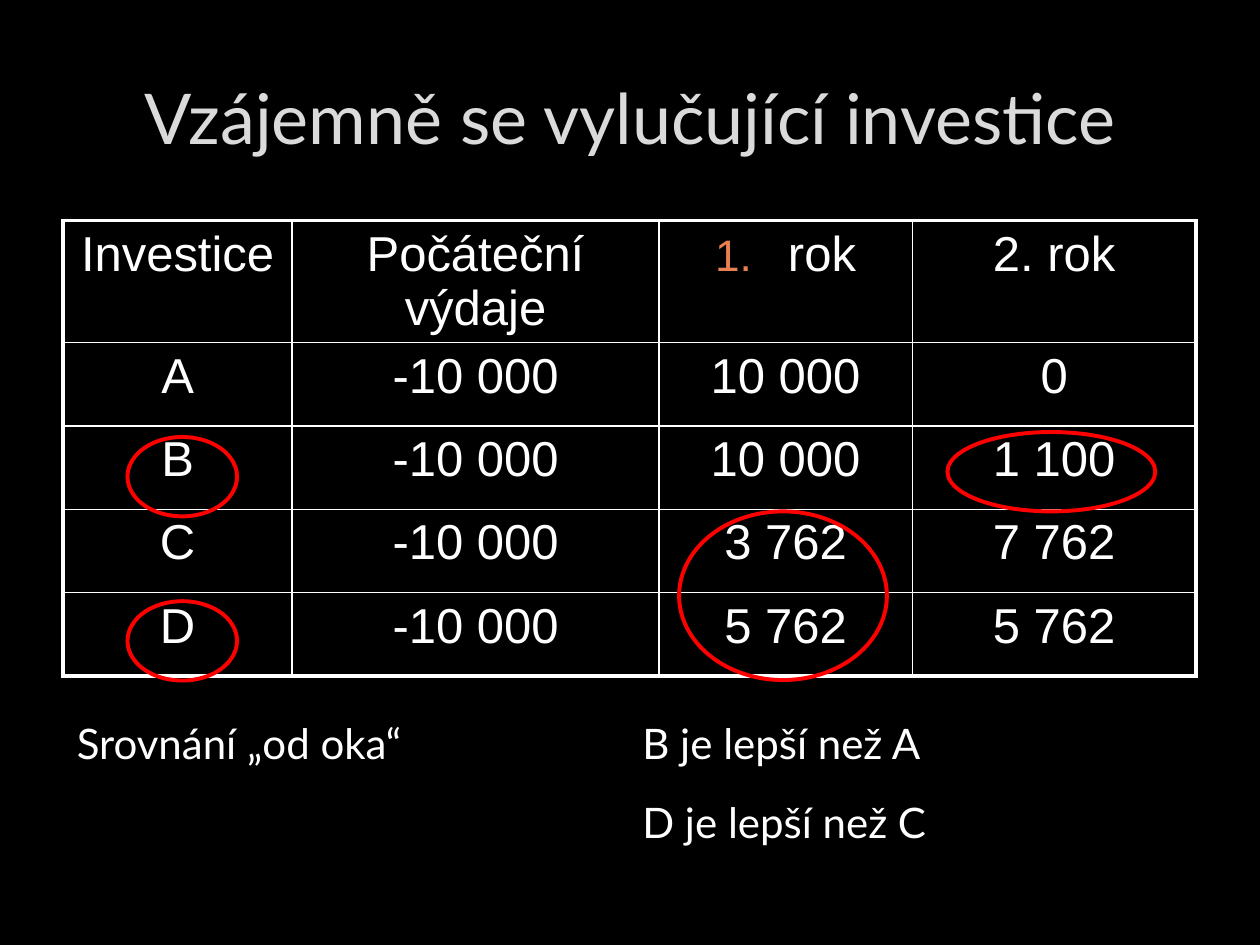
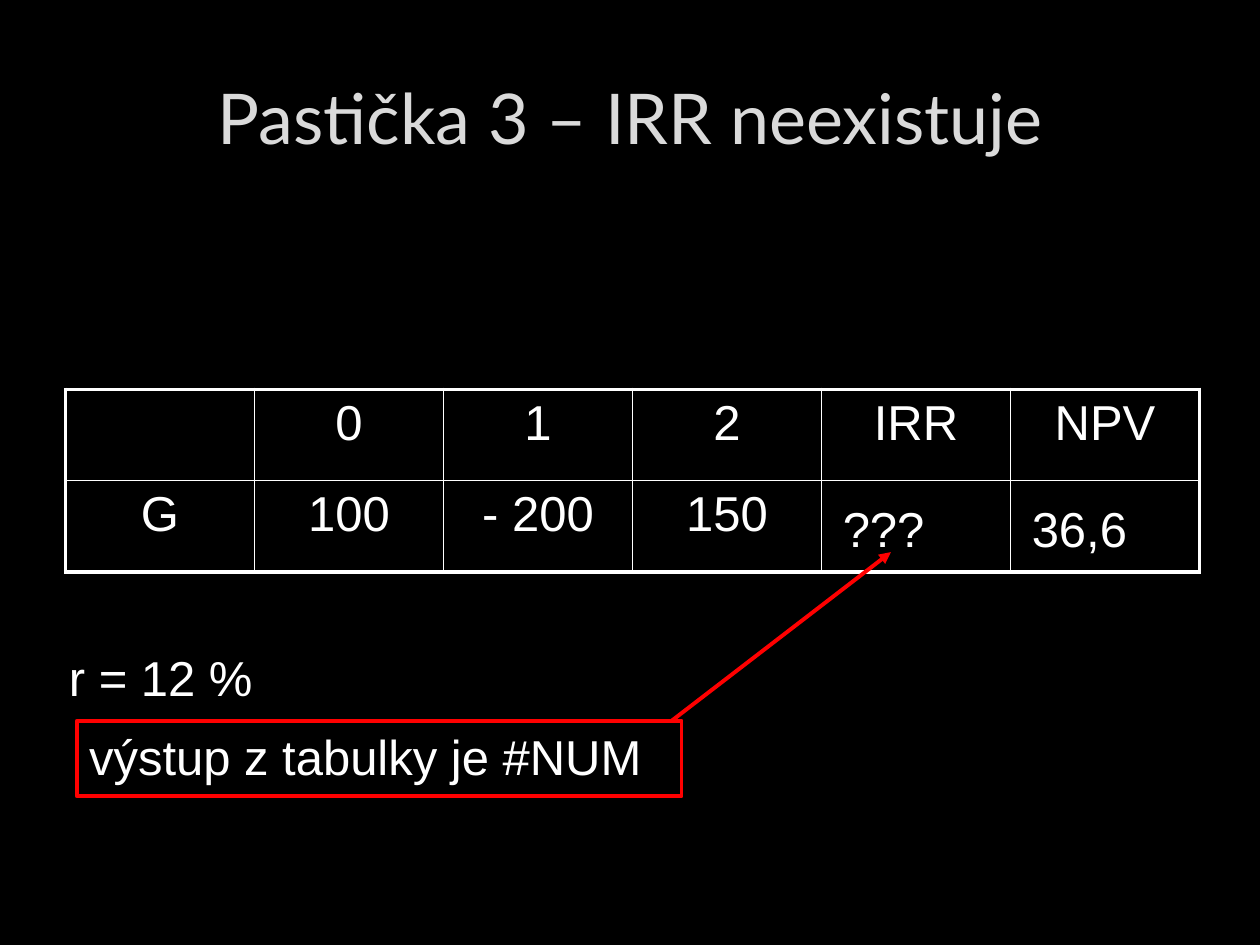
import lxml.etree
import pptx
import pptx.dml.color
import pptx.enum.shapes
import pptx.enum.text
import pptx.oxml.ns
import pptx.util

Cm, Pt = pptx.util.Cm, pptx.util.Pt
qn = pptx.oxml.ns.qn
SHAPES = pptx.enum.shapes.MSO_SHAPE
ALIGN = pptx.enum.text.PP_ALIGN
ANCHOR = pptx.enum.text.MSO_ANCHOR

BLACK, WHITE, RED = "000000", "FFFFFF", "FF0000"
PALE, ORANGE = "DADADA", "E98052"
HEAD, BODY = "Lato", "Arial"
THIN, THICK = Pt(1), Pt(2.25)


def paint(form, tone):
    """Give a fill, line or font colour format the hex colour."""
    form.rgb = pptx.dml.color.RGBColor.from_string(tone)


def add(node, tag, **attrs):
    return lxml.etree.SubElement(node, qn(tag), attrs)


def write(para, text, size, font, tone=WHITE, align=ALIGN.LEFT, gap=0):
    para.alignment = align
    para.space_before = Pt(gap)
    run = para.add_run()
    run.text = text
    run.font.size = Pt(size)
    run.font.name = font
    paint(run.font.color, tone)


def trace(line):
    """Make a line red and thick."""
    line.fill.solid()
    paint(line.fill.fore_color, RED)
    line.width = THICK


def start(deck, text):
    """Add a slide with its title and return it."""
    slide = deck.slides.add_slide(deck.slide_layouts[5])
    title = slide.shapes.title
    title.left, title.top, title.width, title.height = map(
        Cm, (1.27, 0.76, 22.86, 3.18))
    frame = title.text_frame
    frame.vertical_anchor = ANCHOR.MIDDLE
    write(frame.paragraphs[0], text, 40, HEAD, PALE, ALIGN.CENTER)
    return slide


def edge(cell, sides):
    """Draw the cell borders from a map of side to width."""
    props = cell._tc.get_or_add_tcPr()
    for side, width in sides.items():
        line = add(props, "a:ln" + side, w=str(width))
        add(add(line, "a:solidFill"), "a:srgbClr", val=WHITE)
    cell.fill.background()


def grid(slide, left, top, cols, rows, data):
    """Add a table with thin inner lines and a thick frame."""
    box = map(Cm, (left, top, sum(cols), sum(rows)))
    table = slide.shapes.add_table(len(rows), len(cols), *box).table
    table.first_row = table.horz_banding = False
    for col, width in zip(table.columns, cols):
        col.width = Cm(width)
    for row, height in zip(table.rows, rows):
        row.height = Cm(height)
    for r, texts in enumerate(data):
        for c, text in enumerate(texts):
            cell = table.cell(r, c)
            outer = {"L": c == 0, "R": c == len(cols) - 1,
                     "T": r == 0, "B": r == len(rows) - 1}
            edge(cell, {s: THICK if out else THIN for s, out in outer.items()})
            if text:
                write(cell.text_frame.paragraphs[0], text, 28, BODY,
                      align=ALIGN.CENTER, gap=1)
    return table


def number(para):
    """Number a paragraph with an orange figure."""
    props = para._p.get_or_add_pPr()
    props.set("marL", str(Cm(1.47)))
    props.set("indent", str(-Cm(1.47)))
    add(add(props, "a:buClr"), "a:srgbClr", val=ORANGE)
    add(props, "a:buSzPct", val="90000")
    add(props, "a:buFont", typeface=BODY)
    add(props, "a:buAutoNum", type="arabicPeriod")


def fill(shape, text, size, font):
    """Put top-aligned wrapped text in a shape."""
    frame = shape.text_frame
    frame.word_wrap = True
    frame.vertical_anchor = ANCHOR.TOP
    frame.auto_size = pptx.enum.text.MSO_AUTO_SIZE.SHAPE_TO_FIT_TEXT
    write(frame.paragraphs[0], text, size, font, gap=3)


def note(slide, box, text, size=28, font=BODY):
    fill(slide.shapes.add_textbox(*map(Cm, box)), text, size, font)


def ring(slide, *box):
    shape = slide.shapes.add_shape(SHAPES.OVAL, *map(Cm, box))
    shape.shadow.inherit = False
    shape.fill.background()
    trace(shape.line)


def frame(slide, box, text):
    """Add a red-edged box with text."""
    shape = slide.shapes.add_shape(SHAPES.RECTANGLE, *map(Cm, box))
    shape.shadow.inherit = False
    shape.fill.solid()
    paint(shape.fill.fore_color, BLACK)
    trace(shape.line)
    fill(shape, text, 28, BODY)


def arrow(slide, *ends):
    kind = pptx.enum.shapes.MSO_CONNECTOR.STRAIGHT
    link = slide.shapes.add_connector(kind, *map(Cm, ends))
    trace(link.line)
    add(link.line._get_or_add_ln(), "a:tailEnd", type="triangle")
    add(link._element.spPr, "a:effectLst")


def rivals(deck):
    """Build the slide on mutually exclusive investments."""
    slide = start(deck, "Vzájemně se vylučující investice")
    table = grid(slide, 1.27, 4.45, [4.62, 7.39, 5.11, 5.72],
                 [2.21] + [1.68] * 4, [
        ["Investice", "Počáteční výdaje", "rok", "2. rok"],
        ["A", "-10 000", "10 000", "0"],
        ["B", "-10 000", "10 000", "1 100"],
        ["C", "-10 000", "3 762", "7 762"],
        ["D", "-10 000", "5 762", "5 762"],
    ])
    number(table.cell(0, 2).text_frame.paragraphs[0])
    for top in (8.81, 12.12):
        ring(slide, 2.57, top, 2.21, 1.6)
    ring(slide, 19.1, 8.71, 4.19, 1.6)
    ring(slide, 13.69, 10.31, 4.19, 3.4)
    for left, top, text in [(1.3, 14.33, "Srovnání „od oka“"),
                            (12.7, 14.33, "B je lepší než A"),
                            (12.7, 15.93, "D je lepší než C")]:
        note(slide, (left, top, 9.4, 1.27), text, 24, HEAD)


def trap(deck):
    """Build the slide on the missing IRR."""
    slide = start(deck, "Pastička 3 – IRR neexistuje")
    left, top, step, high = 1.32, 7.85, 3.81, 1.84
    grid(slide, left, top, [step] * 6, [high] * 2, [
        ["", "0", "1", "2", "IRR", "NPV"],
        ["G", "100", "- 200", "150", "", ""],
    ])
    note(slide, (1.14, 12.93, 5.41, 1.45), "r = 12 %")
    for col, text in [(4, "???"), (5, "36,6")]:
        box = (left + col * step + 0.18, top + high + 0.24, 3.2, 1.45)
        note(slide, box, text)
    frame(slide, (1.55, 14.53, 12.19, 1.52), "výstup z tabulky je #NUM")
    arrow(slide, 13.54, 14.53, 17.96, 11.13)


def main():
    deck = pptx.Presentation()
    deck.slide_width, deck.slide_height = Cm(25.4), Cm(19.05)
    back = deck.slide_master.background.fill
    back.solid()
    paint(back.fore_color, BLACK)
    rivals(deck)
    trap(deck)
    deck.save("out.pptx")


if __name__ == "__main__":
    main()
